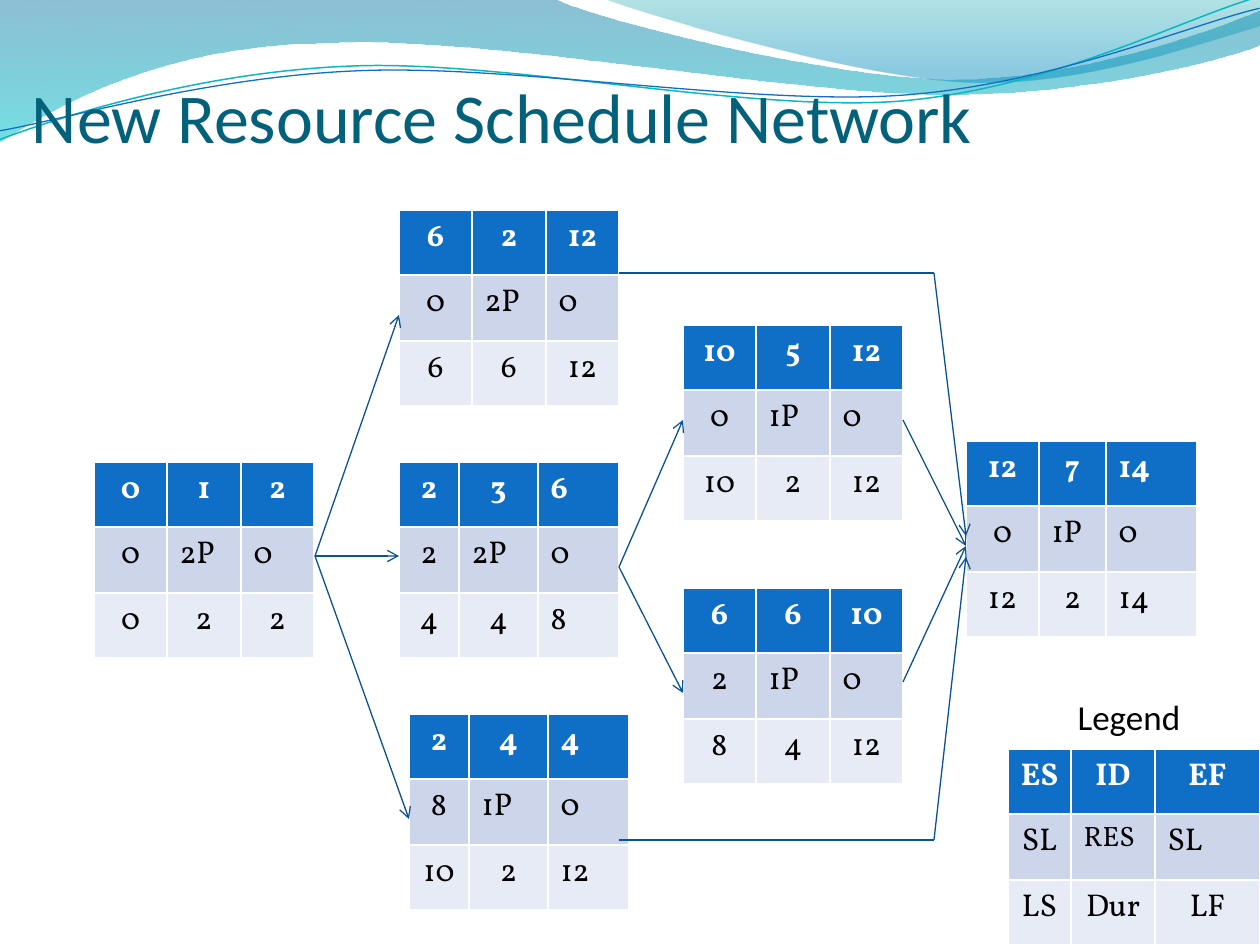
from dataclasses import dataclass
from itertools import chain
from math import cos, radians, sin

from lxml.etree import SubElement
from pptx import Presentation
from pptx.dml.color import RGBColor
from pptx.enum.shapes import MSO_CONNECTOR
from pptx.enum.text import MSO_ANCHOR as Anchor, PP_ALIGN as Align
from pptx.oxml.ns import qn
from pptx.util import Pt

SCALE = 914400 / 126  # EMU in one px
ROW_HEIGHTS = (65, 66, 65)
LINE_TILT = -2.7  # degrees
WHITE, BLACK, ARROW_BLUE = "FFFFFF", "000000", "095295"
ROW_FILLS = ("0F6FC6", "CCD5EA", "E7EBF5")
EVEN, NARROW = (73, 74, 73), (60, 79, 81)


@dataclass
class Activity:
    left: int
    top: int
    columns: tuple[int, int, int]
    rows: tuple[str, str, str]
    last_left: bool = False  # last column aligned left throughout


@dataclass
class Link:
    start: tuple[int, int]
    end: tuple[int, int]
    arrow: bool = True


@dataclass
class Wave:
    """Segments hold two numbers for a line or six for a Bezier curve."""
    start: tuple[int, int]
    segments: list[tuple[int, ...]]
    gradient: tuple[tuple[float, str, int], ...] = ()  # position, colour, opacity
    line: str = ""
    width: float = 0
    pivot: tuple[int, int] = (0, 0)  # centre of a tilted line


WAVES = [
    Wave((0, 0), [(554, -1), (600, 21, 837, 79, 955, 79), (1075, 79, 1207, 33, 1260, 11),
                  (1261, 45), (1239, 55, 1096, 96, 940, 94), (784, 94, 481, 35, 324, 43),
                  (163, 45, 58, 105, -1, 142), (0, 0)],
         gradient=((0, "0074A1", 45), (1, "00C6CF", 55))),
    Wave((604, -1), [(641, 14, 859, 78, 969, 82), (1079, 87, 1211, 40, 1260, 26),
                     (1260, 0), (604, -1)],
         gradient=((0, "00A1A9", 30), (0.8, "008BBF", 45))),
    Wave((0, 140), [(60, 117, 199, 72, 349, 66), (498, 59, 747, 112, 898, 101),
                    (1050, 89, 1182, 19, 1257, -3)],
         line="0AB8BF", width=0.85, pivot=(629, 72)),
    Wave((0, 131), [(59, 121, 207, 77, 357, 71), (508, 64, 752, 106, 903, 95),
                    (1053, 84, 1186, 26, 1260, 8)],
         line="0F6FC6", width=0.75, pivot=(629, 74)),
]

ACTIVITIES = [
    Activity(94, 462, EVEN, ("0 1 2", "0 2P 0", "0 2 2")),
    Activity(1008, 749, (63, 84, 105), ("ES ID EF", "SL RES SL", "LS Dur LF")),
    Activity(399, 210, EVEN, ("6 2 12", "0 2P 0", "6 6 12")),
    Activity(399, 462, NARROW, ("2 3 6", "2 2P 0", "4 4 8"), True),
    Activity(683, 325, EVEN, ("10 5 12", "0 1P 0", "10 2 12")),
    Activity(966, 441, (73, 67, 91), ("12 7 14", "0 1P 0", "12 2 14"), True),
    Activity(683, 588, EVEN, ("6 6 10", "2 1P 0", "8 4 12")),
    Activity(409, 714, NARROW, ("2 4 4", "8 1P 0", "10 2 12"), True),
]

FIRST_EXIT, THIRD_EXIT, LAST_ENTRY = (315, 556), (619, 567), (966, 546)
TOP_BEND, BOTTOM_BEND = (934, 273), (934, 840)
LINKS = [
    Link(FIRST_EXIT, (399, 315)),
    Link(FIRST_EXIT, (399, 556)),
    Link(FIRST_EXIT, (409, 819)),
    Link(THIRD_EXIT, (683, 420)),
    Link(THIRD_EXIT, (683, 693)),
    Link((903, 420), LAST_ENTRY),
    Link((903, 682), LAST_ENTRY),
    Link((619, 273), TOP_BEND, arrow=False),
    Link((619, 840), BOTTOM_BEND, arrow=False),
    Link(TOP_BEND, (966, 536)),
    Link(BOTTOM_BEND, (966, 557)),
]


def px(length: float) -> int:
    return round(length * SCALE)


def color(value: str) -> RGBColor:
    return RGBColor.from_string(value)


def apply_format(target, values: dict) -> None:
    for name, value in values.items():
        setattr(target, name, value)


def write(para, text: str, hue: str, **font) -> None:
    span = para.add_run()
    span.text = text
    apply_format(span.font, font)
    span.font.color.rgb = color(hue)


def untilt(point: tuple[int, int], pivot: tuple[int, int]) -> tuple[float, float]:
    """Turn a point back, so that the tilt of the shape puts it in place."""
    angle = radians(-LINE_TILT)
    dx, dy = point[0] - pivot[0], point[1] - pivot[1]
    return (pivot[0] + dx * cos(angle) - dy * sin(angle),
            pivot[1] + dx * sin(angle) + dy * cos(angle))


def bend_segments(shape, segments) -> None:
    """Join each three line points of a curved segment into one Bezier curve."""
    lines = iter(list(shape.element.iter(qn("a:lnTo"))))
    for segment in segments:
        first = next(lines)
        if len(segment) == 6:
            first.tag = qn("a:cubicBezTo")
            for extra in (next(lines), next(lines)):
                first.append(extra[0])
                extra.getparent().remove(extra)


def draw_wave(page, wave: Wave) -> None:
    numbers = list(chain(wave.start, *wave.segments))
    points = list(zip(numbers[::2], numbers[1::2]))
    if wave.line:
        points = [untilt(point, wave.pivot) for point in points]
    builder = page.shapes.build_freeform(*points[0], scale=SCALE)
    builder.add_line_segments(points[1:], close=bool(wave.gradient))
    shape = builder.convert_to_shape()
    bend_segments(shape, wave.segments)
    shape.shadow.inherit = False
    if wave.line:
        shape.rotation = LINE_TILT
        shape.fill.background()
        shape.line.color.rgb = color(wave.line)
        shape.line.width = Pt(wave.width)
        return
    shape.line.fill.background()
    shape.fill.gradient()
    shape.fill.gradient_angle = 270
    for stop, (position, hue, _) in zip(shape.fill.gradient_stops, wave.gradient):
        stop.position = position
        stop.color.rgb = color(hue)
    hues = shape.element.spPr.find(qn("a:gradFill")).iter(qn("a:srgbClr"))
    for element, (_, _, opacity) in zip(hues, wave.gradient):
        SubElement(element, qn("a:alpha"), val=str(opacity * 1000))


def draw_text(page, box_px, text: str, hue: str, size: int, frame_format: dict,
              para_format: dict) -> None:
    box = page.shapes.add_textbox(*map(px, box_px))
    apply_format(box.text_frame, {"word_wrap": True, **frame_format})
    para = box.text_frame.paragraphs[0]
    apply_format(para, para_format)
    write(para, text, hue, size=Pt(size), name="Calibri")


def draw_activity(page, activity: Activity) -> None:
    table = page.shapes.add_table(
        3, 3, px(activity.left), px(activity.top),
        px(sum(activity.columns)), px(sum(ROW_HEIGHTS))).table
    for column, width in zip(table.columns, activity.columns):
        column.width = px(width)
    for r, line in enumerate(activity.rows):
        table.rows[r].height = px(ROW_HEIGHTS[r])
        for c, text in enumerate(line.split()):
            cell = table.cell(r, c)
            cell.fill.solid()
            cell.fill.fore_color.rgb = color(ROW_FILLS[r])
            para = cell.text_frame.paragraphs[0]
            left = (r == 1 and c > 0) or (c == 2 and activity.last_left)
            para.alignment = Align.LEFT if left else Align.CENTER
            write(para, text, BLACK if r else WHITE, bold=r == 0, name="Vollkorn",
                  size=Pt(16 if text == "RES" else 18))


def draw_link(page, link: Link) -> None:
    connector = page.shapes.add_connector(
        MSO_CONNECTOR.STRAIGHT, *map(px, link.start + link.end))
    connector.line.color.rgb = color(ARROW_BLUE)
    connector.line.width = Pt(0.75)
    if link.arrow:
        SubElement(connector.line._get_or_add_ln(), qn("a:tailEnd"), type="arrow")
    SubElement(connector.element.spPr, qn("a:effectLst"))


def main() -> None:
    deck = Presentation()
    deck.slide_width, deck.slide_height = px(1260), px(945)
    page = deck.slides.add_slide(deck.slide_layouts[6])
    for wave in WAVES:
        draw_wave(page, wave)
    draw_text(page, (32, 42, 1228, 116), "New Resource Schedule Network", "04617B", 40,
              {"vertical_anchor": Anchor.BOTTOM, "margin_left": 0, "margin_right": 0,
               "margin_bottom": 0}, {"alignment": Align.LEFT})
    for activity in ACTIVITIES:
        draw_activity(page, activity)
    draw_text(page, (1040, 693, 178, 53), "Legend", BLACK, 20,
              {"vertical_anchor": Anchor.MIDDLE},
              {"alignment": Align.CENTER, "line_spacing": 0.9})
    for link in LINKS:
        draw_link(page, link)
    deck.save("out.pptx")


if __name__ == "__main__":
    main()
